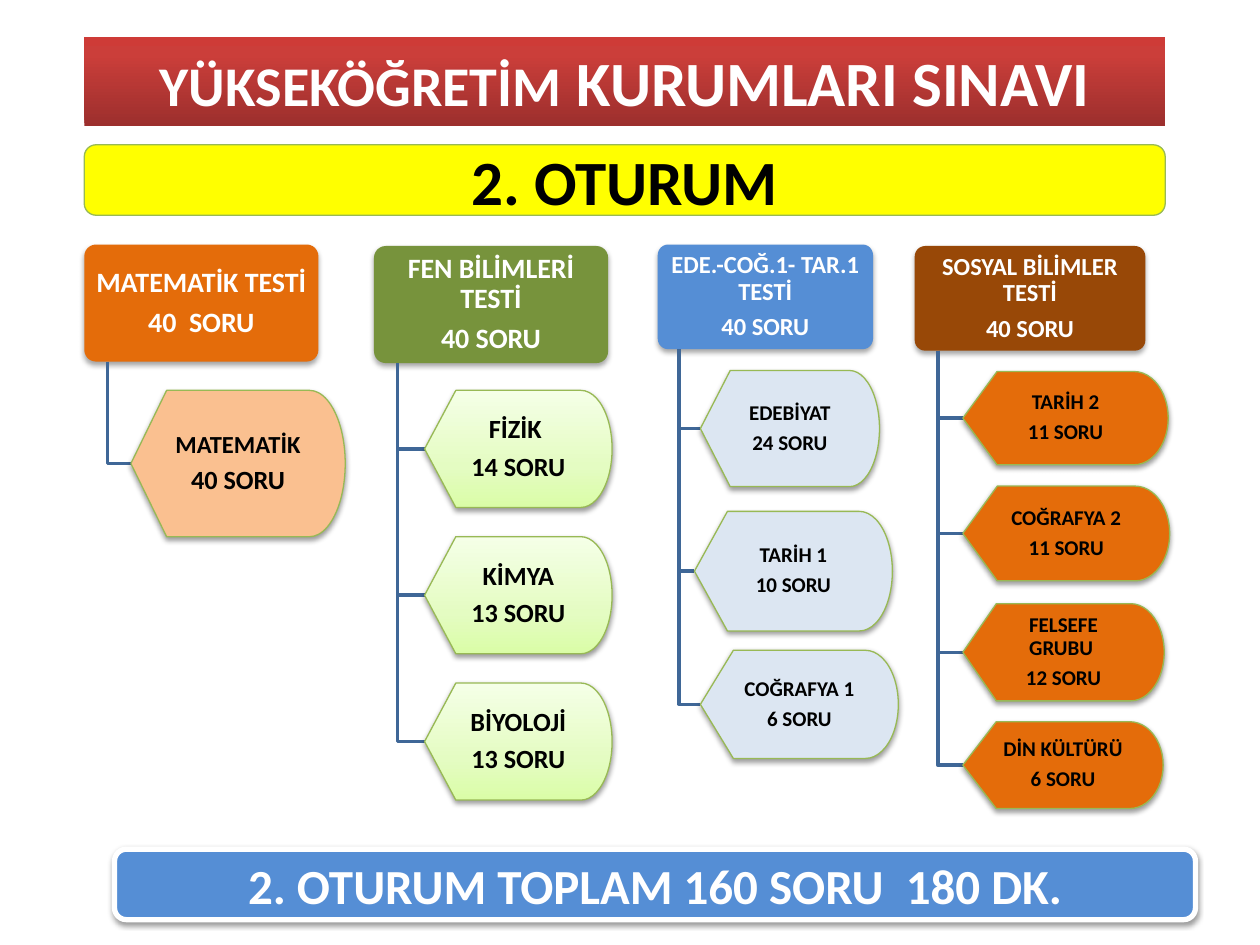
import lxml.etree
import pptx
import pptx.dml.color
import pptx.enum.shapes
import pptx.enum.text
import pptx.oxml.ns
import pptx.util

Cm, Pt = pptx.util.Cm, pptx.util.Pt
RGBColor = pptx.dml.color.RGBColor
MSO_SHAPE = pptx.enum.shapes.MSO_SHAPE
SubElement = lxml.etree.SubElement
qn = pptx.oxml.ns.qn

WHITE = RGBColor(0xFF, 0xFF, 0xFF)
BLACK = RGBColor(0x00, 0x00, 0x00)
YELLOW = RGBColor(0xFF, 0xFF, 0x00)
ORANGE = RGBColor(0xE4, 0x6C, 0x0A)
PEACH = RGBColor(0xFA, 0xC0, 0x90)
GREEN = RGBColor(0x77, 0x93, 0x3C)
OUTLINE_GREEN = RGBColor(0x98, 0xB9, 0x55)
BLUE = RGBColor(0x55, 0x8E, 0xD5)
PALE_BLUE = RGBColor(0xDC, 0xE6, 0xF2)
BRANCH_BLUE = RGBColor(0x3F, 0x67, 0x97)
BROWN = RGBColor(0x98, 0x48, 0x07)
RED_STOPS = [(0, RGBColor(0x9C, 0x2F, 0x2D)), (80, RGBColor(0xCB, 0x3E, 0x3A)),
             (100, RGBColor(0xCE, 0x3B, 0x37))]
LIME_STOPS = [(0, RGBColor(0xDA, 0xFD, 0xA7)), (35, RGBColor(0xE4, 0xFC, 0xC2)),
              (100, RGBColor(0xF5, 0xFF, 0xE7))]


def paint(shape, fill):
    """Fill with one colour, or with (percent, colour) stops running upwards."""
    if isinstance(fill, RGBColor):
        shape.fill.solid()
        shape.fill.fore_color.rgb = fill
        return
    shape.fill.gradient()
    shape.fill.gradient_angle = 90
    stops = next(shape._element.iter(qn("a:gsLst")))
    for stop in list(stops):
        stops.remove(stop)
    for percent, color in fill:
        stop = SubElement(stops, qn("a:gs"), pos=str(percent * 1000))
        SubElement(stop, qn("a:srgbClr"), val=str(color))


def add_box(kind, frame, fill, lines, color, outline=None, shadow=None):
    """Add a shape with (text, size) lines; outline is (colour, points),
    shadow is (opacity percent, distance in points)."""
    box = page.shapes.add_shape(kind, *[Cm(length) for length in frame])
    paint(box, fill)
    if outline:
        box.line.color.rgb = outline[0]
        box.line.width = Pt(outline[1])
    else:
        box.line.fill.background()
    box.shadow.inherit = False
    if shadow:
        effects = box._element.spPr.find(qn("a:effectLst"))
        outer = SubElement(effects, qn("a:outerShdw"), blurRad=str(Pt(3.1)),
                           dist=str(Pt(shadow[1])), dir="5400000", rotWithShape="0")
        tint = SubElement(outer, qn("a:srgbClr"), val=str(BLACK))
        SubElement(tint, qn("a:alpha"), val=str(shadow[0] * 1000))
    text = box.text_frame
    text.word_wrap = True
    text.vertical_anchor = pptx.enum.text.MSO_ANCHOR.MIDDLE
    for index, (wording, size) in enumerate(lines):
        para = text.add_paragraph() if index else text.paragraphs[0]
        para.text = wording
        para.alignment = pptx.enum.text.PP_ALIGN.CENTER
        para.font.name = "Calibri"
        para.font.size = Pt(size)
        para.font.bold = True
        para.font.color.rgb = color
    return box


deck = pptx.Presentation()
deck.slide_width, deck.slide_height = Cm(25.4), Cm(19.05)
page = deck.slides.add_slide(deck.slide_layouts[5])

# Title banner
title = page.shapes.title
title.left, title.top, title.width, title.height = Cm(1.7), Cm(0.74), Cm(21.79), Cm(1.8)
outline = SubElement(title._element.spPr, qn("a:prstGeom"), prst="roundRect")
SubElement(outline, qn("a:avLst"))
paint(title, RED_STOPS)
title.text_frame.vertical_anchor = pptx.enum.text.MSO_ANCHOR.MIDDLE
para = title.text_frame.paragraphs[0]
para.alignment = pptx.enum.text.PP_ALIGN.CENTER
para.font.name = "Calibri"
para.font.bold = True
para.font.color.rgb = WHITE
for wording, size in [("YÜKSEKÖĞRETİM", 32), (" KURUMLARI SINAVI", 36)]:
    span = para.add_run()
    span.text = wording
    span.font.size = Pt(size)

# Session banner and total
ITEM_SHADOW = (38, 1.6)
ITEM_OUTLINE = (OUTLINE_GREEN, 0.75)
add_box(MSO_SHAPE.ROUNDED_RECTANGLE, (1.7, 2.92, 21.79, 1.42), YELLOW,
        [("2. OTURUM", 36)], BLACK, ITEM_OUTLINE)
add_box(MSO_SHAPE.ROUNDED_RECTANGLE, (2.31, 17.12, 21.79, 1.42), BLUE,
        [("2. OTURUM TOPLAM 160 SORU  180 DK.", 28)], WHITE, (WHITE, 3), ITEM_SHADOW)

# Tests: header frame, colour, lines, item colour, items as (frame, lines)
tests = [
    ((1.7, 4.93, 4.72, 2.36), ORANGE, [("MATEMATİK TESTİ", 16), ("40  SORU", 16)], PEACH, [
        ((2.64, 7.87, 4.32, 2.95), [("MATEMATİK", 14), ("40 SORU", 15)]),
    ]),
    ((7.54, 4.96, 4.72, 2.36), GREEN, [("FEN BİLİMLERİ TESTİ", 16), ("40 SORU", 16)], LIME_STOPS, [
        ((8.56, 7.87 + 2.95 * row, 3.78, 2.36), [(name, 15), (count, 15)])
        for row, (name, count) in enumerate([
            ("FİZİK ", "14 SORU"), ("KİMYA", "13 SORU"), ("BİYOLOJİ", "13 SORU")])
    ]),
    ((13.26, 4.93, 4.34, 2.11), BLUE, [("EDE.-COĞ.1- TAR.1 TESTİ", 14), ("40 SORU", 14)], PALE_BLUE, [
        ((14.12, 7.47, 3.61, 2.34), [("EDEBİYAT", 12), ("24 SORU", 12)]),
        ((14, 10.31, 3.99, 2.41), [("TARİH 1", 12), ("10 SORU", 12)]),
        ((14.12, 13.11, 3.99, 2.18), [("COĞRAFYA 1", 12), ("6 SORU", 12)]),
    ]),
    ((18.44, 4.96, 4.65, 2.11), BROWN, [("SOSYAL BİLİMLER TESTİ", 14), ("40 SORU", 14)], ORANGE, [
        ((19.41, 7.49, 4.14, 1.88), [("TARİH 2", 12), ("11 SORU", 12)]),
        ((19.41, 9.8, 4.17, 1.91), [("COĞRAFYA 2", 12), ("11 SORU", 12)]),
        ((19.41, 12.17, 4.06, 1.96), [("FELSEFE GRUBU ", 12), ("12 SORU", 12)]),
        ((19.41, 14.55, 4.04, 1.75), [("DİN KÜLTÜRÜ", 12), ("6 SORU", 12)]),
    ]),
]

for frame, fill, lines, item_fill, items in tests:
    header = add_box(MSO_SHAPE.ROUNDED_RECTANGLE, frame, fill, lines, WHITE, shadow=(35, 1.8))
    header.adjustments[0] = 0.1
    boxes = [header]
    trunk = header.left + header.width // 10
    for item_frame, item_lines in items:
        left, top, width, height = item_frame
        middle = Cm(top + height / 2)
        builder = page.shapes.build_freeform(trunk, header.top + header.height)
        builder.add_line_segments([(trunk, middle), (Cm(left), middle)], close=False)
        branch = builder.convert_to_shape()
        branch.fill.background()
        branch.line.color.rgb = BRANCH_BLUE
        branch.line.width = Pt(2)
        branch.shadow.inherit = False
        boxes.append(add_box(MSO_SHAPE.FLOWCHART_DISPLAY, item_frame, item_fill, item_lines,
                             BLACK, ITEM_OUTLINE, ITEM_SHADOW))
    for box in boxes:
        text = box.text_frame
        text.margin_left = text.margin_right = Cm(0.08)
        text.margin_top = text.margin_bottom = Cm(0.05)
        for para in text.paragraphs:
            para.line_spacing = 0.9
            para.space_after = Pt(round(para.font.size.pt * 0.35, 1))

deck.save("out.pptx")
